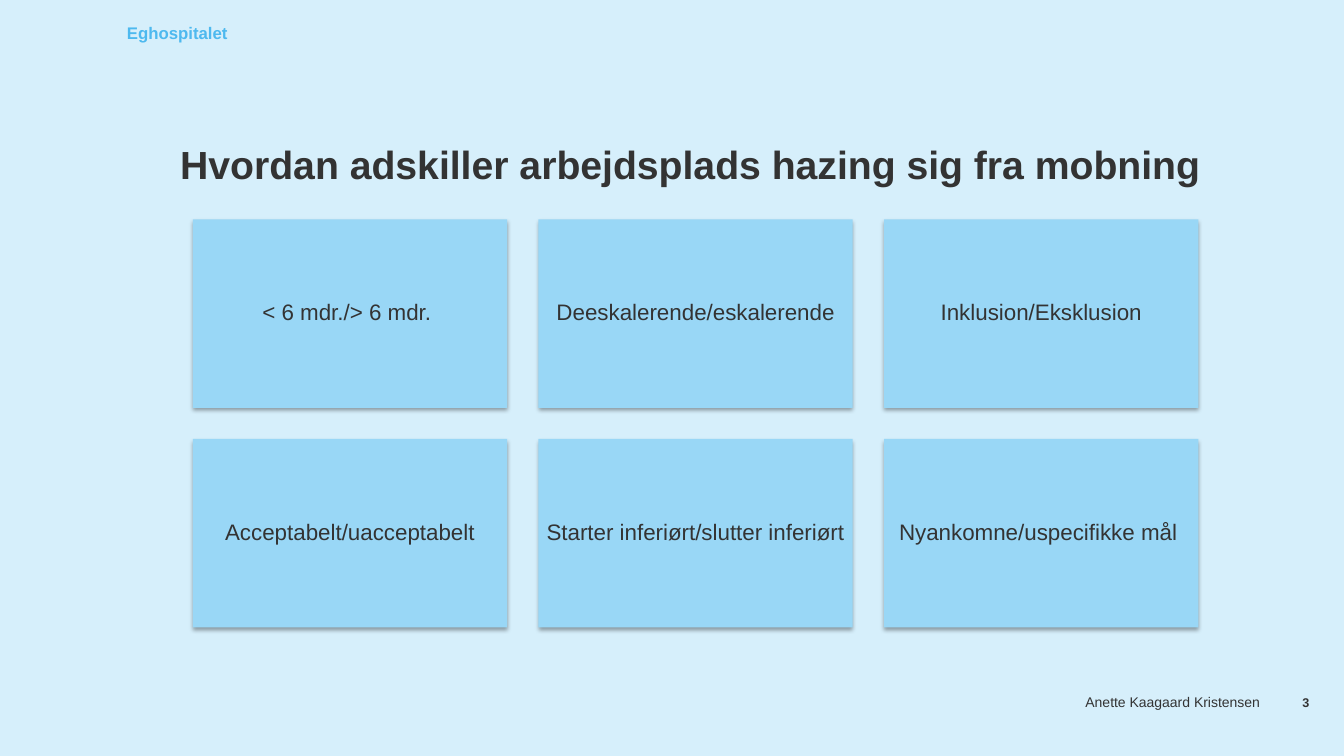
"""Build a slide that contrasts workplace hazing with bullying in six cards."""
from dataclasses import dataclass

from lxml.etree import SubElement
from pptx import Presentation
from pptx.dml.color import RGBColor
from pptx.enum.shapes import MSO_SHAPE
from pptx.enum.text import MSO_ANCHOR, MSO_AUTO_SIZE, PP_ALIGN
from pptx.oxml.ns import qn
from pptx.shapes.autoshape import Shape
from pptx.slide import Slide
from pptx.util import Cm, Pt


@dataclass(frozen=True)
class Theme:
    font: str = "Arial"
    background: str = "D6EFFB"
    card: str = "99D7F6"
    header: str = "4DB9EF"
    text: str = "333333"
    shadow: str = "000000"
    title_size: float = 28
    card_size: float = 16
    header_size: float = 12
    footer_size: float = 10
    number_size: float = 9


@dataclass(frozen=True)
class Frame:
    left: float
    top: float
    width: float
    height: float


@dataclass(frozen=True)
class TextStyle:
    size: float
    color: str
    bold: bool = False
    align: PP_ALIGN = PP_ALIGN.CENTER
    anchor: MSO_ANCHOR = MSO_ANCHOR.TOP
    line_spacing: float = 1.0
    inset: float = 0


@dataclass(frozen=True)
class Label:
    text: str
    frame: Frame
    style: TextStyle


THEME = Theme()

TITLE = Label(
    "Hvordan adskiller arbejdsplads hazing sig fra mobning ",
    Frame(3.13, 2.41, 28.8, 2.31),
    TextStyle(THEME.title_size, THEME.text, True, anchor=MSO_ANCHOR.BOTTOM, line_spacing=0.85),
)
LABELS = (
    Label("Eghospitalet", Frame(3.2, 0.58, 17, 0.6),
          TextStyle(THEME.header_size, THEME.header, True, PP_ALIGN.LEFT)),
    Label("Anette Kaagaard Kristensen", Frame(22.35, 17.48, 9.4, 0.5),
          TextStyle(THEME.footer_size, THEME.text, align=PP_ALIGN.RIGHT)),
    Label("3", Frame(31.96, 17.5, 1.9, 0.5),
          TextStyle(THEME.number_size, THEME.text, True)),
)
CARD_ROWS = (
    ("< 6 mdr./> 6 mdr. ", "Deeskalerende/eskalerende", "Inklusion/Eksklusion"),
    ("Acceptabelt/uacceptabelt", "Starter inferiørt/slutter inferiørt ", "Nyankomne/uspecifikke mål "),
)
CARD_STYLE = TextStyle(THEME.card_size, THEME.text, anchor=MSO_ANCHOR.MIDDLE,
                       line_spacing=0.9, inset=0.17)
FIRST_CARD = Frame(4.86, 5.53, 7.92, 4.75)
COLUMN_PITCH = 8.71
ROW_PITCH = 5.53


def place(box: Shape, frame: Frame) -> None:
    """Move and size a box."""
    box.left, box.top = Cm(frame.left), Cm(frame.top)
    box.width, box.height = Cm(frame.width), Cm(frame.height)


def write(box: Shape, text: str, style: TextStyle) -> None:
    """Fill a box with one formatted paragraph."""
    frame = box.text_frame
    frame.text = text
    frame.word_wrap = True
    frame.auto_size = MSO_AUTO_SIZE.NONE
    frame.vertical_anchor = style.anchor
    frame.margin_left = frame.margin_right = Cm(style.inset)
    frame.margin_top = frame.margin_bottom = Cm(style.inset)
    para = frame.paragraphs[0]
    para.alignment = style.align
    para.line_spacing = style.line_spacing
    para.space_before = Pt(0)
    for span in para.runs:
        span.font.name = THEME.font
        span.font.size = Pt(style.size)
        span.font.bold = style.bold
        span.font.color.rgb = RGBColor.from_string(style.color)


def add_shadow(box: Shape) -> None:
    """Give a box a soft shadow straight below it."""
    box.shadow.inherit = False
    effects = box.element.spPr.find(qn("a:effectLst"))
    shadow = SubElement(effects, qn("a:outerShdw"), blurRad=str(Pt(3.1)),
                        dist=str(Pt(1.8)), dir="5400000", rotWithShape="0")
    color = SubElement(shadow, qn("a:srgbClr"), val=THEME.shadow)
    SubElement(color, qn("a:alpha"), val="35000")


def add_label(page: Slide, label: Label) -> None:
    """Add a text box for a label."""
    box = page.shapes.add_textbox(0, 0, 0, 0)
    place(box, label.frame)
    write(box, label.text, label.style)


def add_card(page: Slide, text: str, frame: Frame) -> None:
    """Add a filled card with centred text."""
    box = page.shapes.add_shape(MSO_SHAPE.RECTANGLE, 0, 0, 0, 0)
    place(box, frame)
    box.fill.solid()
    box.fill.fore_color.rgb = RGBColor.from_string(THEME.card)
    box.line.fill.background()
    add_shadow(box)
    write(box, text, CARD_STYLE)


def main() -> None:
    """Build and save the deck."""
    deck = Presentation()
    deck.slide_width, deck.slide_height = Cm(33.87), Cm(19.05)
    page = deck.slides.add_slide(deck.slide_layouts.get_by_name("Title Only"))
    page.background.fill.solid()
    page.background.fill.fore_color.rgb = RGBColor.from_string(THEME.background)
    place(page.shapes.title, TITLE.frame)
    write(page.shapes.title, TITLE.text, TITLE.style)
    for row, texts in enumerate(CARD_ROWS):
        for column, text in enumerate(texts):
            add_card(page, text, Frame(FIRST_CARD.left + column * COLUMN_PITCH,
                                       FIRST_CARD.top + row * ROW_PITCH,
                                       FIRST_CARD.width, FIRST_CARD.height))
    for label in LABELS:
        add_label(page, label)
    deck.save("out.pptx")


if __name__ == "__main__":
    main()
